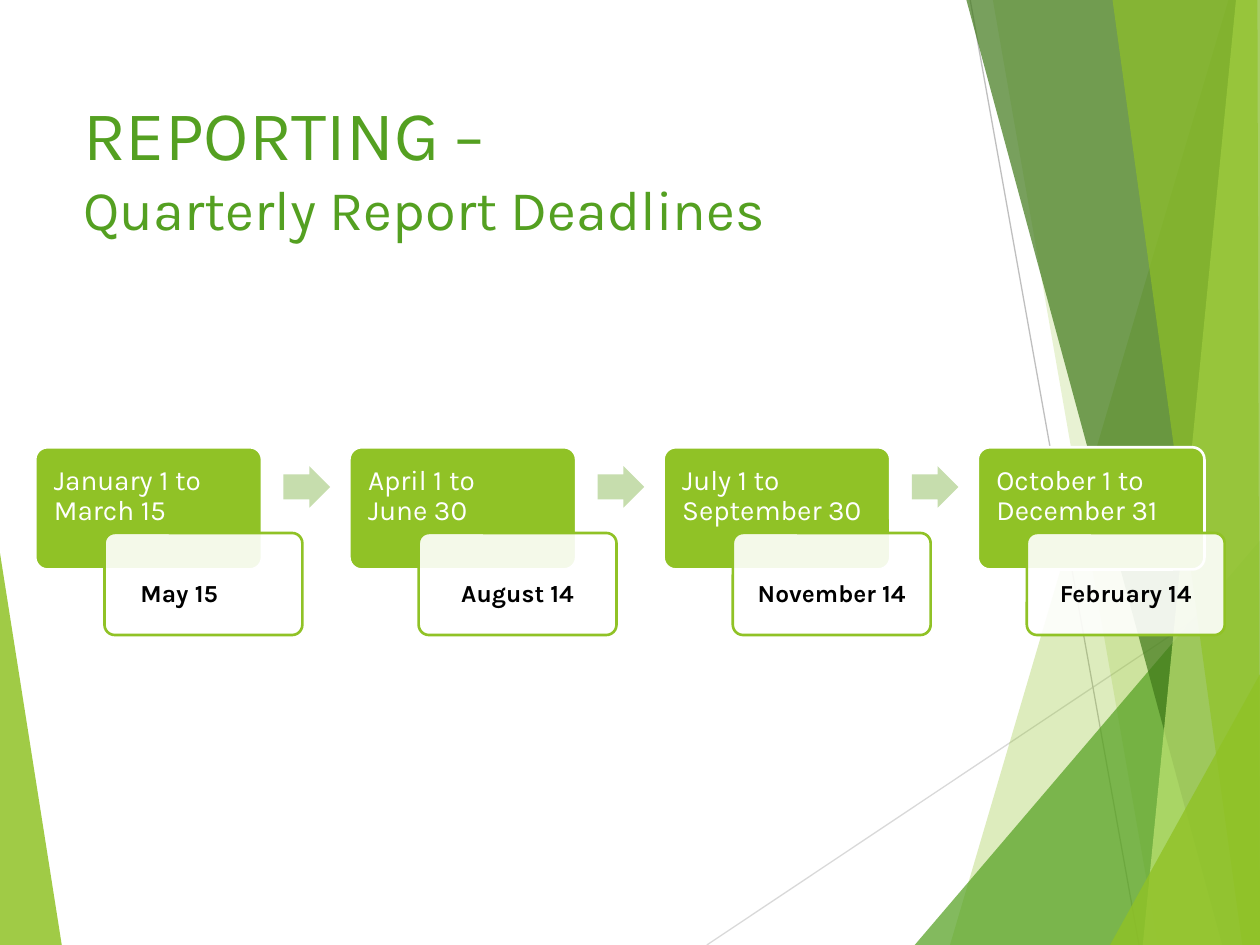
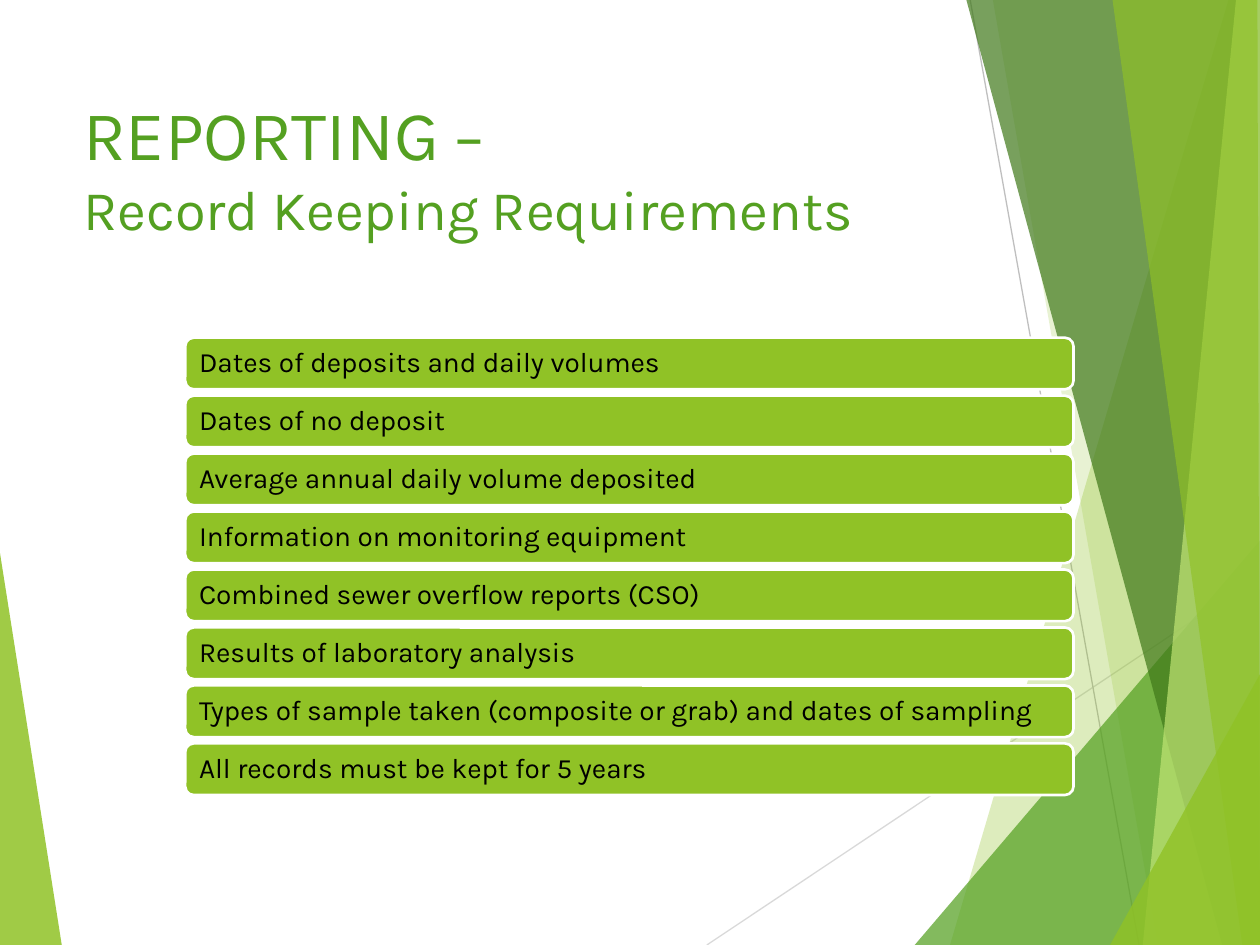
from dataclasses import dataclass

from lxml import etree
from pptx import Presentation
from pptx.dml.color import RGBColor
from pptx.enum.shapes import MSO_CONNECTOR, MSO_SHAPE
from pptx.enum.text import MSO_ANCHOR, PP_ALIGN
from pptx.oxml.ns import qn
from pptx.util import Inches, Pt

ROUND, ARROW = MSO_SHAPE.ROUNDED_RECTANGLE, MSO_SHAPE.RIGHT_ARROW
LINE = MSO_CONNECTOR.STRAIGHT
LEFT, CENTER = PP_ALIGN.LEFT, PP_ALIGN.CENTER
TOP, MIDDLE = MSO_ANCHOR.TOP, MSO_ANCHOR.MIDDLE


@dataclass(frozen=True)
class Theme:
    font: str = "Karla"
    lime: str = "90C226"
    green: str = "54A021"
    forest: str = "3F7819"
    pale: str = "C0E474"
    soft: str = "C6DDAD"
    white: str = "FFFFFF"
    black: str = "000000"
    silver: str = "D9D9D9"
    gray: str = "BFBFBF"
    head: int = 40
    dash: int = 36
    sub: int = 32
    text: int = 16
    date: int = 14
    edge: float = 1.5
    hair: float = 0.75


T = Theme()

# Thin lines behind the bands: start, end, colour
RAYS = [((5.61, 7.5), (10, 4.57), T.silver), ((7.7, 0), (9.04, 7.5), T.gray)]

# Side bands: colour, opacity in percent, corners
BANDS = [
    (T.lime, 85, [(0, 4.39), (0.49, 7.5), (0, 7.5)]),
    (T.lime, 30, [(9.75, 0), (7.54, 7.5), (10, 7.5), (10, 0)]),
    (T.lime, 20, [(7.88, 0), (9.19, 7.5), (10, 7.5), (10, 0)]),
    (T.green, 72, [(7.26, 7.5), (10, 4.29), (10, 7.5)]),
    (T.forest, 70, [(7.67, 0), (9.7, 7.5), (10, 7.5), (10, 0)]),
    (T.pale, 70, [(9.81, 0), (9.07, 7.5), (10, 7.5), (10, 0)]),
    (T.lime, 65, [(8.83, 0), (9.86, 7.5), (10, 7.5), (9.98, 0)]),
    (T.lime, 80, [(8.81, 7.5), (10, 5.35), (10, 7.5)]),
]

TERMS = [
    ("January 1 to March 15", "May 15\t"),
    ("April 1 to\nJune 30", "August 14"),
    ("July 1 to September 30", "November 14"),
    ("October 1 to December 31", "February 14"),
]

RULES = [
    "Dates of deposits and daily volumes",
    "Dates of no deposit",
    "Average annual daily volume deposited",
    "Information on monitoring equipment",
    "Combined sewer overflow reports (CSO)",
    "Results of laboratory analysis",
    "Types of sample taken (composite or grab) and dates of sampling",
    "All records must be kept for 5 years",
]


def apply(item, style):
    for name, value in style.items():
        setattr(item, name, value)


def margins(left, top, right, bottom):
    names = ("margin_left", "margin_top", "margin_right", "margin_bottom")
    return dict(zip(names, map(Inches, (left, top, right, bottom))))


class Deck:
    def __init__(self):
        self.prs = Presentation()
        self.prs.slide_width, self.prs.slide_height = Inches(10), Inches(7.5)
        self.base = self.prs.slide_layouts[5]
        self.slide = None
        # Title place, shared through the layout
        place = dict(left=Inches(0.56), top=Inches(0.67),
                     width=Inches(7.05), height=Inches(1.44))
        apply(self.base.placeholders[0], place)

    def start(self, lead, sub):
        self.slide = self.prs.slides.add_slide(self.base)
        frame = self.slide.shapes.title.text_frame
        apply(frame, dict(vertical_anchor=TOP, word_wrap=True))
        para = frame.paragraphs[0]
        para.alignment = LEFT
        self.run(para, lead, T.head, T.green)
        self.run(para, " – ", T.dash, T.green)
        para.add_line_break()
        self.run(para, sub, T.sub, T.green)

    def run(self, para, text, size, color, bold=False):
        run = para.add_run()
        run.text = text
        apply(run.font, dict(name=T.font, size=Pt(size), bold=bold))
        run.font.color.rgb = RGBColor.from_string(color)

    def paint(self, shape, fill, alpha=100, edge=None):
        shape.shadow.inherit = False
        shape.fill.solid()
        shape.fill.fore_color.rgb = RGBColor.from_string(fill)
        if alpha < 100:
            tone = shape.element.spPr.find(".//" + qn("a:srgbClr"))
            etree.SubElement(tone, qn("a:alpha")).set("val", str(alpha * 1000))
        if edge:
            shape.line.color.rgb = RGBColor.from_string(edge)
            shape.line.width = Pt(T.edge)
        else:
            shape.line.fill.background()

    def shape(self, kind, box, fill, alpha=100, edge=None, adjust=()):
        shape = self.slide.shapes.add_shape(kind, *map(Inches, box))
        for i, value in enumerate(adjust):
            shape.adjustments[i] = value
        self.paint(shape, fill, alpha, edge)
        return shape

    def label(self, shape, text, size, color, style, align=LEFT, bold=False):
        frame = shape.text_frame
        apply(frame, dict(word_wrap=True, **style))
        for i, part in enumerate(text.split("\n")):
            para = frame.add_paragraph() if i else frame.paragraphs[0]
            apply(para, dict(alignment=align, line_spacing=0.9))
            self.run(para, part, size, color, bold)

    def line(self, start, end, color):
        line = self.slide.shapes.add_connector(LINE, *map(Inches, start + end))
        line.line.color.rgb = RGBColor.from_string(color)
        line.line.width = Pt(T.hair)
        etree.SubElement(line.element.spPr, qn("a:effectLst"))
        return line

    def band(self, color, alpha, points):
        first, *rest = [tuple(map(Inches, p)) for p in points]
        pen = self.slide.shapes.build_freeform(*first)
        pen.add_line_segments(rest)
        shape = pen.convert_to_shape()
        self.paint(shape, color, alpha)
        return shape

    def backdrop(self):
        # Draw once, then move to the layout, behind its placeholders
        left, *right = BANDS
        parts = [self.band(*left)]
        parts += [self.line(*ray) for ray in RAYS]
        parts += [self.band(*band) for band in right]
        tree = self.base.shapes.element
        for i, part in enumerate(parts, 2):
            tree.insert(i, part.element)


def terms(deck):
    # Four periods with their due dates
    first, last = 0.28, 7.76
    step = (last - first) / (len(TERMS) - 1)
    period = dict(vertical_anchor=TOP, **margins(0.12, 0.12, 0.12, 0.07))
    due = dict(vertical_anchor=TOP, **margins(0.13, 0.36, 0.13, 0.13))
    for i, (span, date) in enumerate(TERMS):
        x = first + i * step
        final = i == len(TERMS) - 1
        card = deck.shape(ROUND, (x, 3.55, 1.8, 0.97), T.lime,
                          edge=T.white, adjust=[0.1])
        deck.label(card, span, T.text, T.white, period)
        shift = 0.39 if final else 0.55
        tag = deck.shape(ROUND, (x + shift, 4.23, 1.57, 0.81), T.white, 90,
                         T.lime, [0.1])
        deck.label(tag, date, T.date, T.black, due, CENTER, True)
        if not final:
            deck.shape(ARROW, (x + 1.97, 3.7, 0.37, 0.33), T.soft,
                       adjust=[0.6, 0.5])


def rules(deck):
    # Evenly stacked bars
    style = dict(vertical_anchor=MIDDLE, **margins(0.09, 0.07, 0.09, 0.07))
    for i, rule in enumerate(RULES):
        bar = deck.shape(ROUND, (1.47, 2.68 + i * 0.46, 7.05, 0.41), T.lime,
                         edge=T.white)
        deck.label(bar, rule, T.text, T.black, style)


def main():
    deck = Deck()
    deck.start("REPORTING", "Quarterly Report Deadlines")
    deck.backdrop()
    terms(deck)
    deck.start("REPORTING", "Record Keeping Requirements")
    rules(deck)
    deck.prs.save("out.pptx")


if __name__ == "__main__":
    main()
